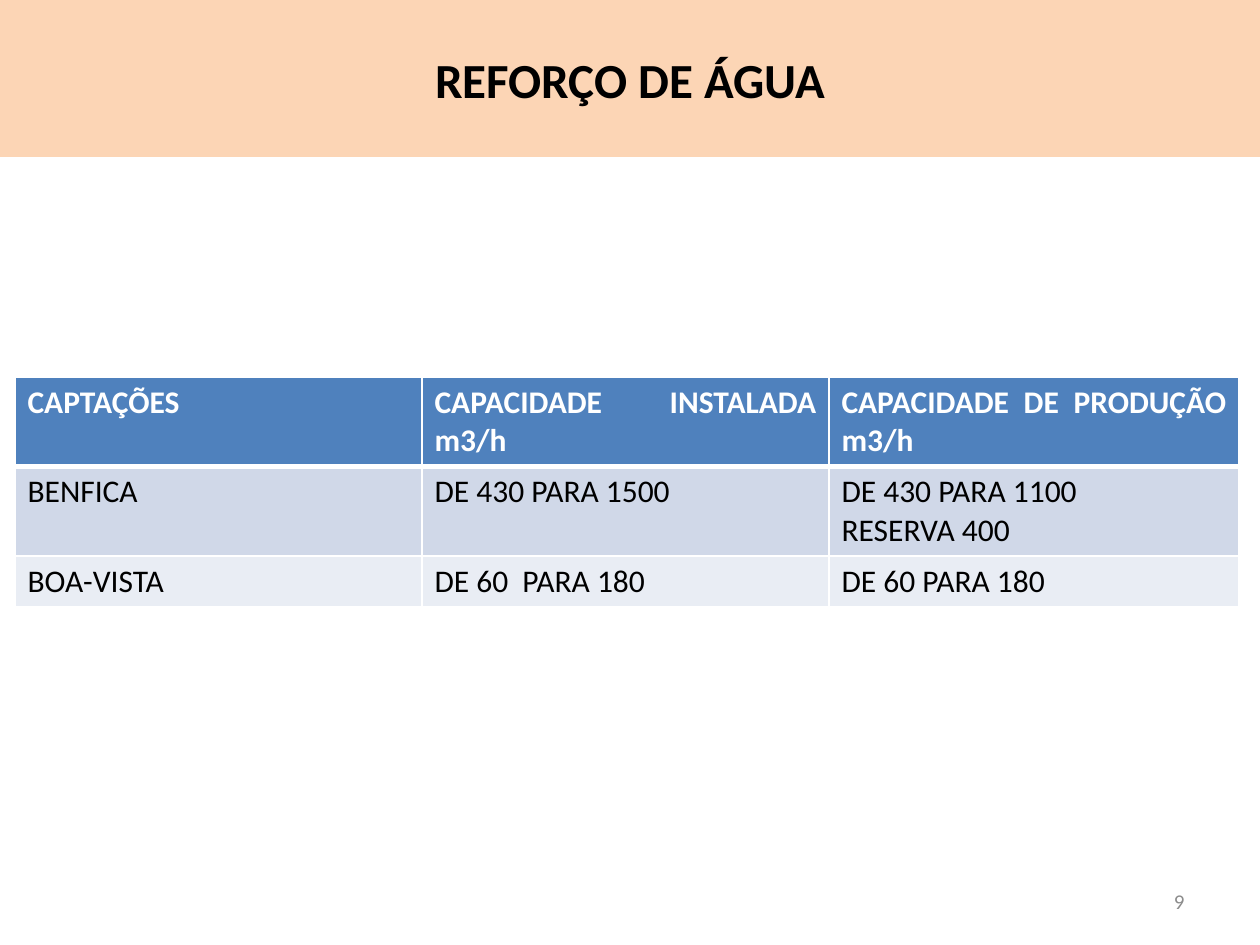
import pptx
import pptx.dml.color
import pptx.enum.shapes
import pptx.enum.text
import pptx.oxml
import pptx.oxml.ns
import pptx.util

ALIGN = pptx.enum.text.PP_ALIGN
MIDDLE = pptx.enum.text.MSO_ANCHOR.MIDDLE


def px(length):
    return pptx.util.Emu(round(length * 914400 / 126))


def color(code):
    return pptx.dml.color.RGBColor.from_string(code)


def write(frame, text, size=18, ink="000000", bold=False, align=ALIGN.LEFT, font="Calibri"):
    """Fill a text frame, one paragraph for each line of text."""
    frame.word_wrap = True
    for index, line in enumerate(text.split("\n")):
        para = frame.add_paragraph() if index else frame.paragraphs[0]
        para.alignment = align
        span = para.add_run()
        span.text = line
        span.font.name = font
        span.font.size = pptx.util.Pt(size)
        span.font.bold = bold
        span.font.color.rgb = color(ink)


class Page:
    band_fill = "FCD5B5"
    header_fill = "4F81BD"
    row_fills = ("D0D8E8", "E9EDF4")
    border = "FFFFFF"
    muted = "8C8C8C"

    def __init__(self, deck):
        self.slide = deck.slides.add_slide(deck.slide_layouts[6])

    def title_band(self, text, left, top, width, height):
        band = self.slide.shapes.add_shape(
            pptx.enum.shapes.MSO_SHAPE.RECTANGLE, px(left), px(top), px(width), px(height))
        band.shadow.inherit = False
        band.fill.solid()
        band.fill.fore_color.rgb = color(self.band_fill)
        band.line.fill.background()
        band.text_frame.vertical_anchor = MIDDLE
        write(band.text_frame, text, size=28, bold=True, align=ALIGN.CENTER)

    def text(self, text, left, top, width, height, **style):
        box = self.slide.shapes.add_textbox(px(left), px(top), px(width), px(height))
        box.text_frame.vertical_anchor = MIDDLE
        write(box.text_frame, text, **style)

    def cell_borders(self, cell, bottom):
        properties = cell._tc.get_or_add_tcPr()
        widths = {"lnL": 1, "lnR": 1, "lnT": 1, "lnB": bottom}
        for index, (side, width) in enumerate(widths.items()):
            properties.insert(index, pptx.oxml.parse_xml(
                f'<a:{side} {pptx.oxml.ns.nsdecls("a")} w="{pptx.util.Pt(width)}">'
                f'<a:solidFill><a:srgbClr val="{self.border}"/></a:solidFill></a:{side}>'))

    def table(self, rows, left, top, widths, heights):
        table = self.slide.shapes.add_table(
            len(rows), len(widths), px(left), px(top), px(sum(widths)), px(sum(heights))).table
        for column, width in zip(table.columns, widths):
            column.width = px(width)
        for r, (row, height) in enumerate(zip(rows, heights)):
            table.rows[r].height = px(height)
            header = r == 0
            fill = self.header_fill if header else self.row_fills[(r - 1) % 2]
            style = dict(ink="FFFFFF", bold=True, align=ALIGN.JUSTIFY) if header else {}
            for c, text in enumerate(row):
                cell = table.cell(r, c)
                cell.fill.solid()
                cell.fill.fore_color.rgb = color(fill)
                write(cell.text_frame, text, **style)
                self.cell_borders(cell, bottom=3 if header else 1)


def main():
    deck = pptx.Presentation()
    deck.slide_width, deck.slide_height = px(1260), px(945)
    page = Page(deck)

    # Title
    page.title_band("REFORÇO DE ÁGUA", 0, 0, 1260, 157)

    # Water intake capacities
    page.table([
        ("CAPTAÇÕES", "CAPACIDADE INSTALADA m3/h", "CAPACIDADE DE PRODUÇÃO m3/h"),
        ("BENFICA", "DE 430 PARA 1500", "DE 430 PARA 1100\nRESERVA 400"),
        ("BOA-VISTA", "DE 60  PARA 180", "DE 60 PARA 180"),
    ], 15, 377, widths=(407, 407, 410), heights=(89, 89, 51))

    # Page number
    page.text("9", 903, 876, 294, 50, size=12, ink=page.muted, align=ALIGN.RIGHT)

    deck.save("out.pptx")


if __name__ == "__main__":
    main()
